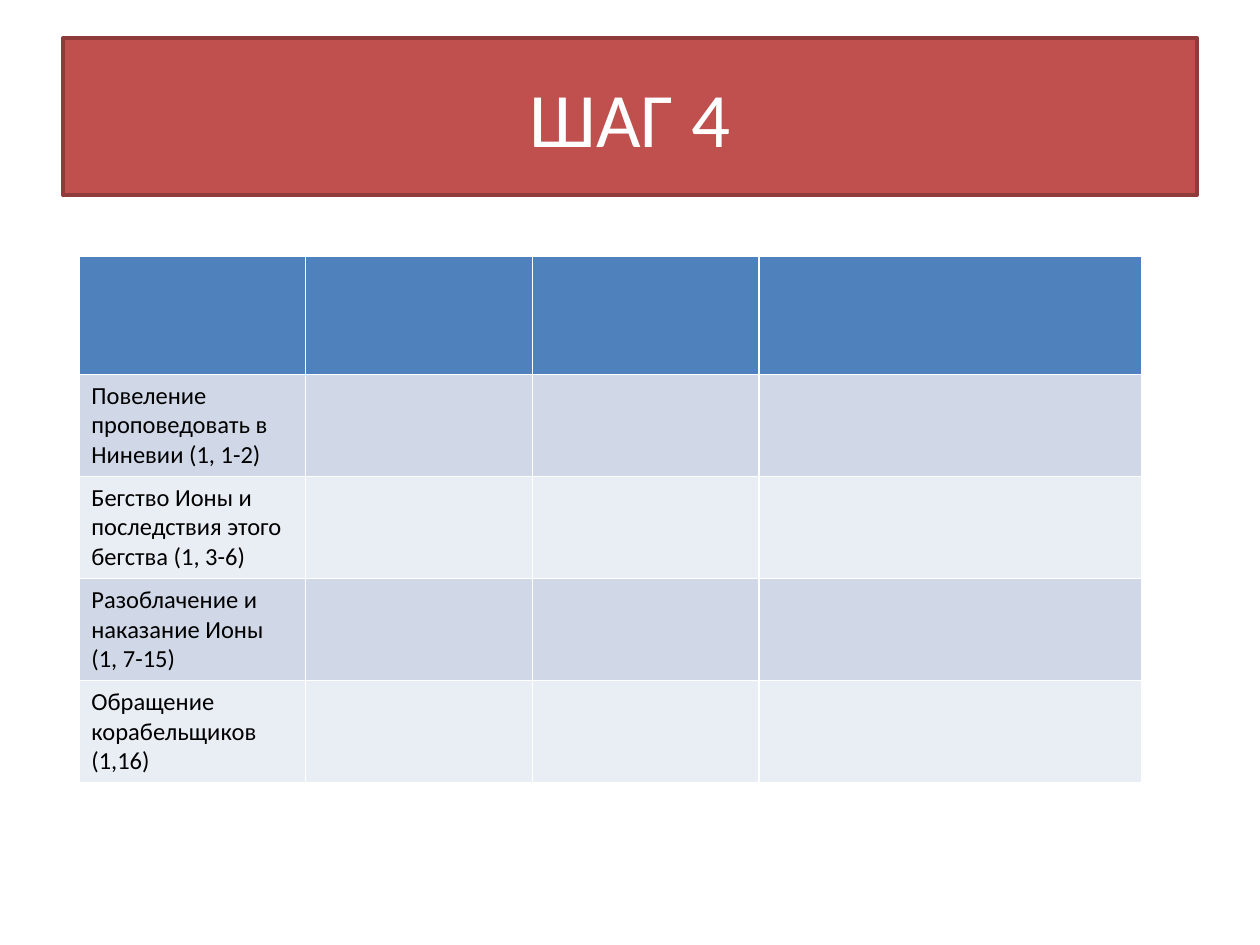
import pptx
import pptx.util
import pptx.dml.color
import pptx.enum.shapes
import pptx.enum.text

Pt = pptx.util.Pt
FONT = "Calibri"
COLORS = {
    "red": "C0504D",
    "edge": "8E3B39",
    "head": "4F81BD",
    "dark": "D0D8E8",
    "light": "E9EDF4",
    "white": "FFFFFF",
    "black": "000000",
}
STEPS = [
    "Повеление проповедовать в Ниневии (1, 1-2)",
    "Бегство Ионы и последствия этого бегства (1, 3-6)",
    "Разоблачение и наказание Ионы (1, 7-15)",
    "Обращение корабельщиков (1,16)",
]
WIDTHS = [129.6, 129.6, 129.6, 218.9]
HEAD, ROW = 67.5, 58


def color(name):
    return pptx.dml.color.RGBColor.from_string(COLORS[name])


def paint(item, name):
    item.fill.solid()
    item.fill.fore_color.rgb = color(name)


def write(frame, text, size, name):
    frame.text = text
    font = frame.paragraphs[0].runs[0].font
    font.name, font.size = FONT, Pt(size)
    font.color.rgb = color(name)


def add_title(slide, text):
    box = slide.shapes.add_shape(
        pptx.enum.shapes.MSO_SHAPE.RECTANGLE, Pt(36), Pt(21.6), Pt(648), Pt(90))
    box.shadow.inherit = False
    paint(box, "red")
    box.line.color.rgb = color("edge")
    box.line.width = Pt(2)
    frame = box.text_frame
    frame.word_wrap = True
    frame.vertical_anchor = pptx.enum.text.MSO_ANCHOR.MIDDLE
    write(frame, text, 44, "white")
    frame.paragraphs[0].alignment = pptx.enum.text.PP_ALIGN.CENTER


def add_grid(slide, steps):
    # The default table style draws the white rules
    table = slide.shapes.add_table(
        len(steps) + 1, len(WIDTHS), Pt(45), Pt(146.5),
        Pt(sum(WIDTHS)), Pt(HEAD + ROW * len(steps))).table
    for col, width in zip(table.columns, WIDTHS):
        col.width = Pt(width)
    for i, row in enumerate(table.rows):
        row.height = Pt(ROW if i else HEAD)
        shade = ("dark" if i % 2 else "light") if i else "head"
        for cell in row.cells:
            paint(cell, shade)
    # Steps run down the first column
    for i, step in enumerate(steps, 1):
        write(table.cell(i, 0).text_frame, step, 14, "black")


def main():
    deck = pptx.Presentation()
    deck.slide_width, deck.slide_height = Pt(720), Pt(540)
    slide = deck.slides.add_slide(deck.slide_layouts[6])
    add_title(slide, "ШАГ 4")
    add_grid(slide, STEPS)
    deck.save("out.pptx")


if __name__ == "__main__":
    main()
